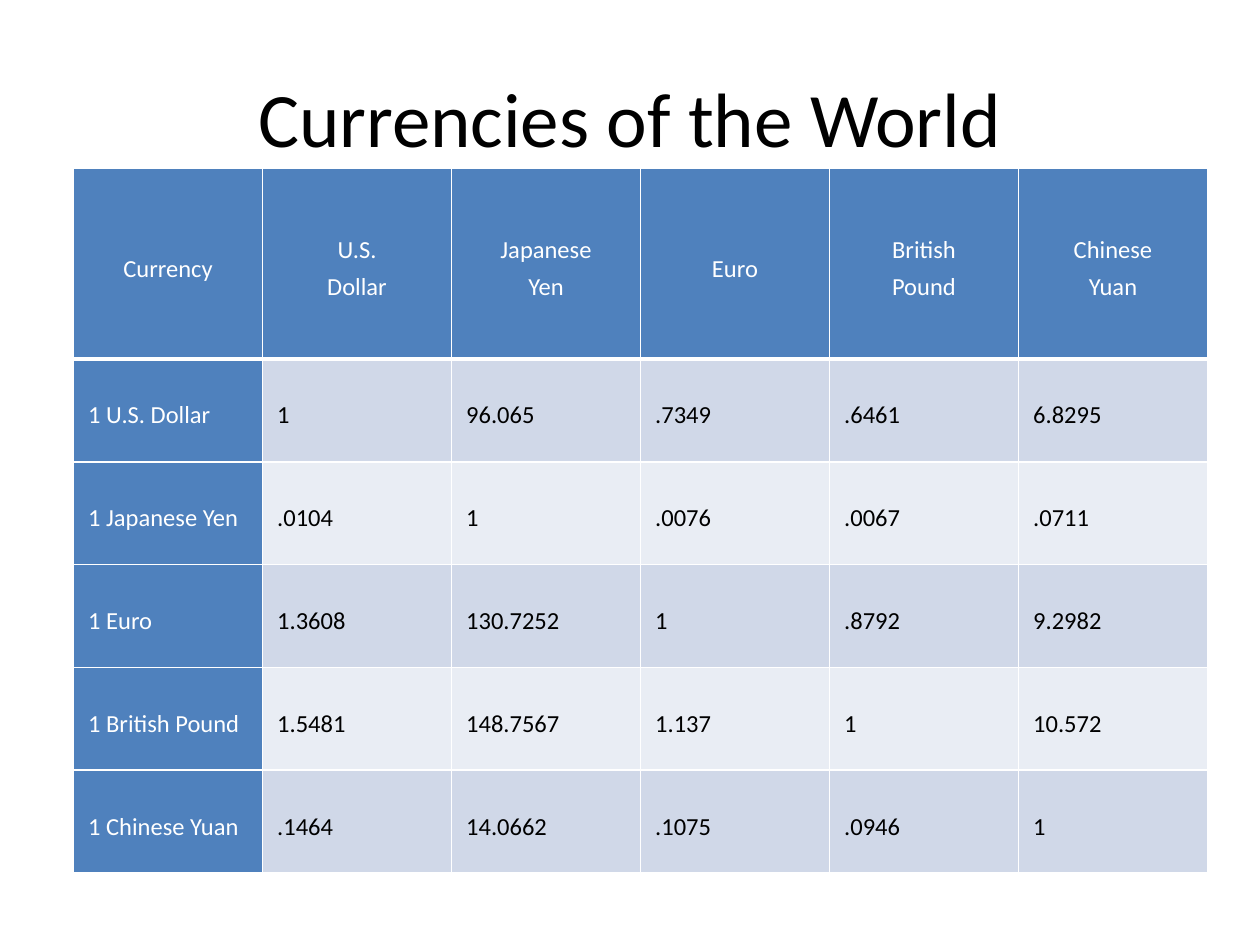
from lxml import etree
from pptx import Presentation
from pptx import util as u
from pptx.dml import color
from pptx.enum import text
from pptx.oxml import ns

COLORS = {"blue": "4F81BD", "odd": "D0D8E8", "even": "E9EDF4", "white": "FFFFFF", "black": "000000"}
RATES = [
    ["Currency", "U.S.\vDollar", "Japanese\vYen", "Euro", "British\vPound", "Chinese\vYuan"],
    ["1 U.S. Dollar", "1", "96.065", ".7349", ".6461", "6.8295"],
    ["1 Japanese Yen", ".0104", "1", ".0076", ".0067", ".0711"],
    ["1 Euro", "1.3608", "130.7252", "1", ".8792", "9.2982"],
    ["1 British Pound", "1.5481", "148.7567", "1.137", "1", "10.572"],
    ["1 Chinese Yuan", ".1464", "14.0662", ".1075", ".0946", "1"],
]
HEADER_H, ROW_H, COL_W = 109.2, 58.75, 108


def style_font(font, size, name):
    font.name, font.size, font.bold = "Calibri", u.Pt(size), False
    font.color.rgb = color.RGBColor.from_string(COLORS[name])


def add_border(cell, side, width):
    ln = etree.SubElement(cell._tc.get_or_add_tcPr(), ns.qn(f"a:ln{side}"), w=str(u.Pt(width)))
    fill = etree.SubElement(ln, ns.qn("a:solidFill"))
    etree.SubElement(fill, ns.qn("a:srgbClr"), val=COLORS["white"])


prs = Presentation()
prs.slide_width, prs.slide_height = u.Pt(720), u.Pt(540)
s = prs.slides.add_slide(prs.slide_layouts[5])

title = s.shapes.title
title.left, title.top, title.width, title.height = u.Pt(36), u.Pt(21.6), u.Pt(648), u.Pt(90)
tf = title.text_frame
tf.text = "Currencies of the World"
tf.vertical_anchor = text.MSO_ANCHOR.MIDDLE
p = tf.paragraphs[0]
p.alignment = text.PP_ALIGN.CENTER
style_font(p.font, 44, "black")

n_rows, n_cols = len(RATES), len(RATES[0])
table = s.shapes.add_table(n_rows, n_cols, u.Pt(42), u.Pt(96), u.Pt(n_cols * COL_W),
                           u.Pt(HEADER_H + (n_rows - 1) * ROW_H)).table
table.first_col = True
for col in table.columns:
    col.width = u.Pt(COL_W)
for i, values in enumerate(RATES):
    table.rows[i].height = u.Pt(ROW_H if i else HEADER_H)
    for j, value in enumerate(values):
        cell = table.cell(i, j)
        heading = i == 0 or j == 0
        for side in "LRTB":
            add_border(cell, side, 3 if i == 0 and side == "B" else 1)
        cell.fill.solid()
        band = "blue" if heading else "odd" if i % 2 else "even"
        cell.fill.fore_color.rgb = color.RGBColor.from_string(COLORS[band])
        cell.margin_left = cell.margin_right = u.Pt(8.4)
        cell.margin_top, cell.margin_bottom = u.Pt(3.6), u.Pt(2.4)
        cell.vertical_anchor = text.MSO_ANCHOR.MIDDLE
        cell.text = value
        p = cell.text_frame.paragraphs[0]
        p.alignment = text.PP_ALIGN.LEFT if i else text.PP_ALIGN.CENTER
        p.line_spacing, p.space_after = u.Pt(21.6), u.Pt(16.8)
        style_font(p.font, 14, "white" if heading else "black")

prs.save("out.pptx")
